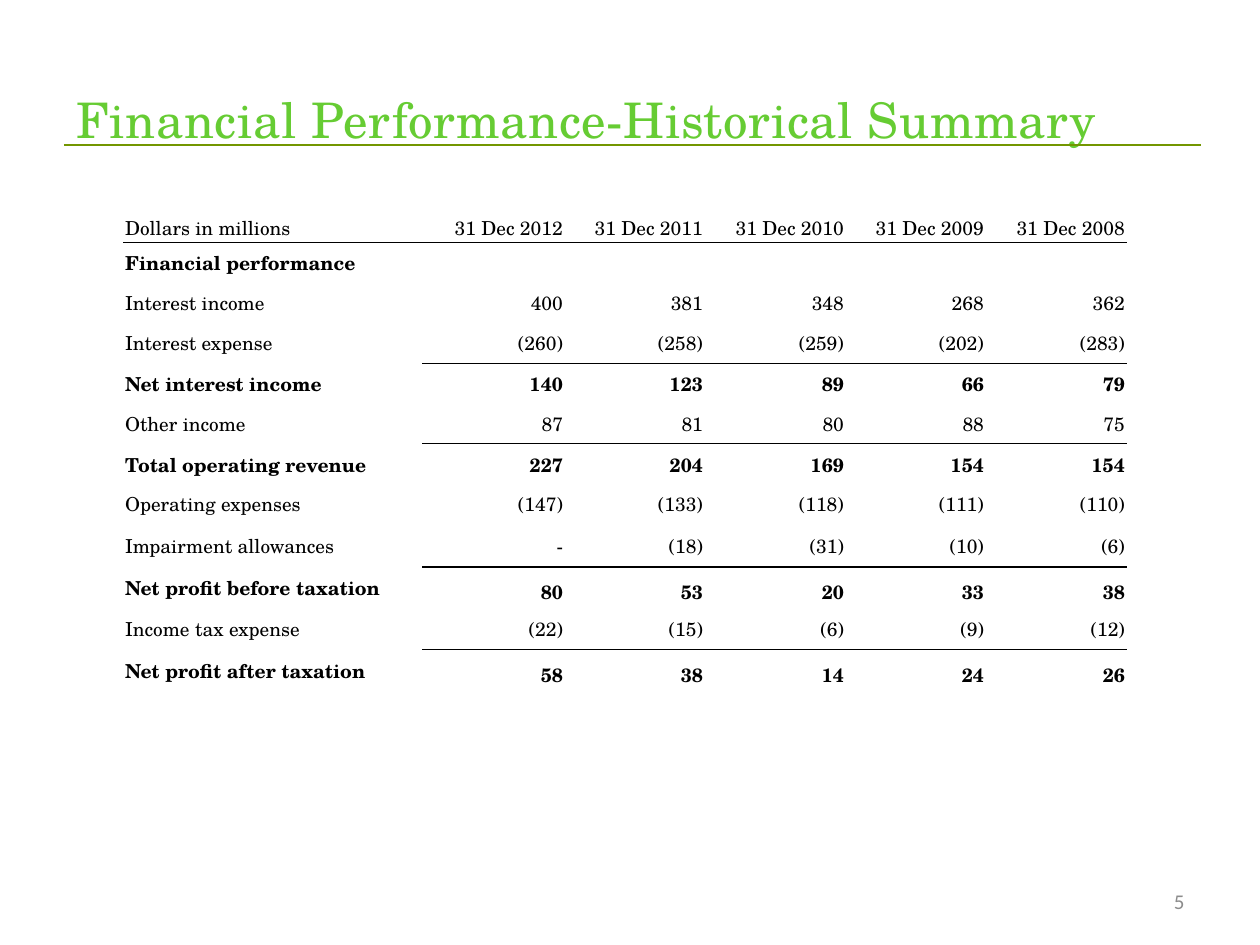
"""Build the five-year financial performance summary slide."""
import pptx
import pptx.dml.color
import pptx.enum.shapes
import pptx.enum.text
import pptx.oxml
import pptx.oxml.ns
import pptx.util

PX = 914400 // 126
RGB = pptx.dml.color.RGBColor
ANCHOR = pptx.enum.text.MSO_ANCHOR
ALIGN = pptx.enum.text.PP_ALIGN
BLACK = RGB(0x00, 0x00, 0x00)
GREEN = RGB(0x66, 0xCC, 0x33)
OLIVE = RGB(0x73, 0x96, 0x00)
GREY = RGB(0x8C, 0x8C, 0x8C)
SERIF = "TeX Gyre Schola"

TITLE = "Financial Performance-Historical Summary"
PAGE = "5"
ROWS = [
    ("Dollars in millions", "31 Dec 2012", "31 Dec 2011", "31 Dec 2010", "31 Dec 2009", "31 Dec 2008"),
    ("Financial performance", "", "", "", "", ""),
    ("Interest income", "400", "381", "348", "268", "362"),
    ("Interest expense", "(260)", "(258)", "(259)", "(202)", "(283)"),
    ("Net interest income", "140", "123", "89", "66", "79"),
    ("Other income", "87", "81", "80", "88", "75"),
    ("Total operating revenue", "227", "204", "169", "154", "154"),
    ("Operating expenses", "(147)", "(133)", "(118)", "(111)", "(110)"),
    ("Impairment allowances", "-", "(18)", "(31)", "(10)", "(6)"),
    ("Net profit before taxation", "80", "53", "20", "33", "38"),
    ("Income tax expense", "(22)", "(15)", "(6)", "(9)", "(12)"),
    ("Net profit after taxation", "58", "38", "14", "24", "26"),
]
COL_WIDTHS = [299, 141, 140, 141, 140, 141]
ROW_HEIGHTS = [47, 40, 40, 41, 40, 41, 40, 40, 43, 40, 43, 40]
BOLD_ROWS = {1, 4, 6, 9, 11}
LOW_ROWS = {9, 11}
RULES_BELOW = {0: (0.5, 0), 3: (0.5, 1), 5: (0.5, 1), 8: (1, 1), 10: (1, 1)}


def px(*values):
    return [v * PX for v in values]


def set_all(obj, **values):
    for name, value in values.items():
        setattr(obj, name, value)


def write(p, text, size, name, color, bold=False, align=ALIGN.LEFT):
    p.alignment = align
    r = p.add_run()
    r.text = text
    set_all(r.font, size=pptx.util.Pt(size), name=name, bold=bold)
    r.font.color.rgb = color
    return r


def add_border(cell, side, width):
    cell._tc.get_or_add_tcPr().append(pptx.oxml.parse_xml(
        f'<a:{side} {pptx.oxml.ns.nsdecls("a")} w="{pptx.util.Pt(width)}">'
        f'<a:solidFill><a:srgbClr val="{BLACK}"/></a:solidFill></a:{side}>'))


def add_title(s):
    sp = s.shapes.title
    set_all(sp, **dict(zip(("left", "top", "width", "height"), px(64, 67, 1132, 158))))
    tf = sp.text_frame
    set_all(tf, word_wrap=True, vertical_anchor=ANCHOR.MIDDLE, margin_bottom=60 * PX,
            auto_size=pptx.enum.text.MSO_AUTO_SIZE.NONE)
    r = write(tf.paragraphs[0], TITLE, 28, SERIF, GREEN)
    r.font._element.set("spc", "40")


def add_title_rule(s):
    line = s.shapes.add_connector(pptx.enum.shapes.MSO_CONNECTOR.STRAIGHT, *px(64, 145, 1201, 145))
    line.line.color.rgb = OLIVE
    line.line.width = pptx.util.Pt(0.75)
    line._element.spPr.append(pptx.oxml.parse_xml(f'<a:effectLst {pptx.oxml.ns.nsdecls("a")}/>'))


def add_page_number(s):
    tf = s.shapes.add_textbox(*px(903, 876, 294, 50)).text_frame
    set_all(tf, word_wrap=True, vertical_anchor=ANCHOR.MIDDLE)
    write(tf.paragraphs[0], PAGE, 12, "Calibri", GREY, align=ALIGN.RIGHT)


def fill_cell(cell, row, col, text):
    low = row == 0 or (row in LOW_ROWS and col > 0)
    set_all(cell, margin_left=PX, margin_top=PX, margin_right=PX, margin_bottom=0,
            vertical_anchor=ANCHOR.BOTTOM if low else ANCHOR.MIDDLE)
    for side, rule_row in (("lnT", row - 1), ("lnB", row)):
        width, first_col = RULES_BELOW.get(rule_row, (0, len(COL_WIDTHS)))
        if col >= first_col:
            add_border(cell, side, width)
    cell.fill.background()
    if text:
        write(cell.text_frame.paragraphs[0], text, 11, SERIF, BLACK,
              row in BOLD_ROWS, ALIGN.RIGHT if col else ALIGN.LEFT)


def add_summary_table(s):
    table = s.shapes.add_table(len(ROWS), len(COL_WIDTHS),
                               *px(124, 195, sum(COL_WIDTHS), sum(ROW_HEIGHTS))).table
    set_all(table, first_row=False, horz_banding=False)
    for column, width in zip(table.columns, COL_WIDTHS):
        column.width = width * PX
    for row, height in enumerate(ROW_HEIGHTS):
        table.rows[row].height = height * PX
        for col, text in enumerate(ROWS[row]):
            fill_cell(table.cell(row, col), row, col, text)


def main():
    prs = pptx.Presentation()
    set_all(prs, slide_width=1260 * PX, slide_height=945 * PX)
    s = prs.slides.add_slide(prs.slide_layouts[5])
    add_title_rule(s)
    add_title(s)
    add_page_number(s)
    add_summary_table(s)
    prs.save("out.pptx")


if __name__ == "__main__":
    main()
